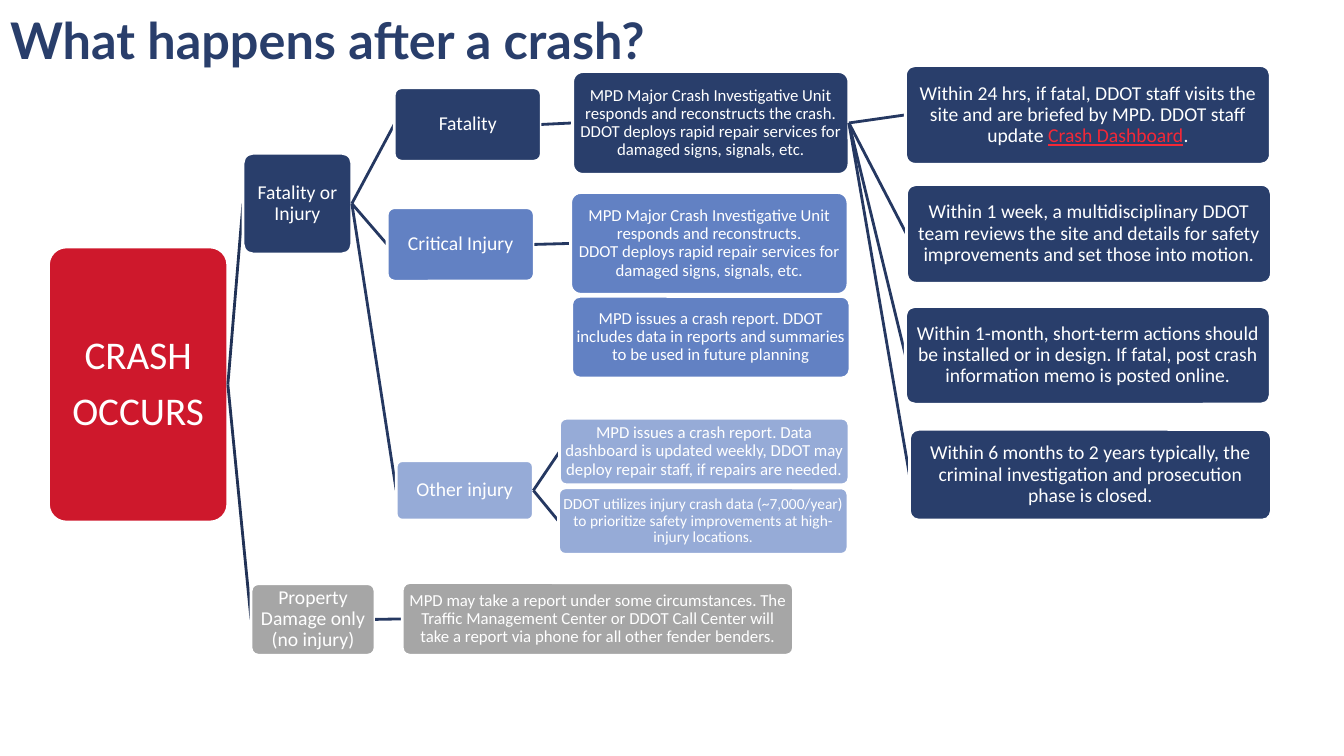
from lxml.etree import SubElement
from pptx import Presentation
from pptx.dml.color import RGBColor
from pptx.enum.shapes import MSO_CONNECTOR, MSO_SHAPE
from pptx.enum.text import MSO_ANCHOR, MSO_AUTO_SIZE, PP_ALIGN
from pptx.oxml.ns import qn
from pptx.util import Inches, Pt

NAVY, BLUE, PALE, GRAY = "293E6B", "6281C3", "96ABD7", "A6A6A6"
RED, WHITE, LINK_RED = "CE182C", "FFFFFF", "F32837"
ROOT_LINE, BRANCH_LINE = "213256", "253861"

# name: (parent, (left, top, width, height), fill, text size, text)
# A tab character in a text separates the underlined part.
BOXES = {
    "crash": (None, (0.48, 2.45, 1.78, 2.73), RED, 28, "CRASH\nOCCURS"),
    "casualty": ("crash", (2.41, 1.52, 1.08, 1), NAVY, 14, "Fatality or Injury"),
    "fatality": ("casualty", (3.91, 0.87, 1.46, 0.73), NAVY, 14, "Fatality"),
    "fatal response": (
        "fatality", (5.68, 0.71, 2.74, 1.02), NAVY, 12,
        "MPD Major Crash Investigative Unit responds and reconstructs the crash.\v"
        "DDOT deploys rapid repair services for damaged signs, signals, etc."),
    "24 hours": (
        "fatal response", (8.98, 0.65, 3.62, 0.98), NAVY, 14,
        "Within 24 hrs, if fatal, DDOT staff visits the site and are briefed by MPD. "
        "DDOT staff update \tCrash Dashboard\t."),
    "1 week": (
        "fatal response", (8.99, 1.83, 3.62, 0.98), NAVY, 14,
        "Within 1 week, a multidisciplinary DDOT team reviews the site and details "
        "for safety improvements and set those into motion."),
    "1 month": (
        "fatal response", (8.98, 3.04, 3.62, 0.97), NAVY, 14,
        "Within 1-month, short-term actions should be installed or in design. "
        "If fatal, post crash information memo is posted online."),
    "6 months": (
        "fatal response", (9.02, 4.26, 3.59, 0.9), NAVY, 14,
        "Within 6 months to 2 years typically, the criminal investigation and "
        "prosecution phase is closed."),
    "critical": ("casualty", (3.84, 2.06, 1.46, 0.73), BLUE, 14, "Critical Injury"),
    "critical response": (
        "critical", (5.66, 1.91, 2.75, 1.01), BLUE, 12,
        "MPD Major Crash Investigative Unit responds and reconstructs.\v"
        "DDOT deploys rapid repair services for damaged signs, signals, etc."),
    "other": ("casualty", (3.93, 4.57, 1.36, 0.59), PALE, 14, "Other injury"),
    "other report": (
        "other", (5.55, 4.15, 2.87, 0.66), PALE, 12,
        "MPD issues a crash report. Data dashboard is updated weekly, DDOT may "
        "deploy repair staff, if repairs are needed."),
    "other data": (
        "other", (5.54, 4.84, 2.87, 0.66), PALE, 11,
        "DDOT utilizes injury crash data (~7,000/year) to prioritize safety "
        "improvements at high-injury locations."),
    "property": ("crash", (2.49, 5.79, 1.23, 0.71), GRAY, 14,
                 "Property Damage only (no injury)"),
    "property report": (
        "property", (3.99, 5.78, 3.88, 0.72), GRAY, 12,
        "MPD may take a report under some circumstances. The Traffic Management "
        "Center or DDOT Call Center will take a report via phone for all other "
        "fender benders."),
    "critical report": (
        None, (5.67, 2.94, 2.76, 0.81), BLUE, 12,
        "MPD issues a crash report. DDOT includes data in reports and summaries "
        "to be used in future planning"),
}


def color(hex_string):
    return RGBColor.from_string(hex_string)


def style_font(font, name, size, hex_string):
    font.name = name
    font.size = Pt(size)
    font.color.rgb = color(hex_string)


def set_title(slide, text):
    title = slide.shapes.title
    title.left, title.top = Inches(0), Inches(0.01)
    title.width, title.height = Inches(13.33), Inches(0.77)
    frame = title.text_frame
    frame.text = text
    frame.auto_size = MSO_AUTO_SIZE.NONE
    frame.vertical_anchor = MSO_ANCHOR.MIDDLE
    paragraph = frame.paragraphs[0]
    paragraph.alignment = PP_ALIGN.LEFT
    font = paragraph.runs[0].font
    style_font(font, "Lato", 36, NAVY)
    font.bold = True


def fill_paragraph(paragraph, text, size):
    parts = text.split("\t")
    paragraph.text = parts[0]
    for part in parts[1:]:
        paragraph.add_run().text = part
    paragraph.alignment = PP_ALIGN.CENTER
    paragraph.line_spacing = 0.9
    paragraph.space_after = Pt(round(size * 0.35))
    for run in paragraph.runs:
        style_font(run.font, "Calibri", size, WHITE)
    if len(parts) > 1:
        underlined = paragraph.runs[1].font
        underlined.underline = True
        underlined.color.rgb = color(LINK_RED)


def add_box(slide, place, fill, size, text):
    box = slide.shapes.add_shape(
        MSO_SHAPE.ROUNDED_RECTANGLE, *(Inches(length) for length in place))
    box.adjustments[0] = 0.1
    box.shadow.inherit = False
    box.fill.solid()
    box.fill.fore_color.rgb = color(fill)
    box.line.color.rgb = color(WHITE)
    box.line.width = Pt(2)
    frame = box.text_frame
    frame.word_wrap = True
    frame.vertical_anchor = MSO_ANCHOR.MIDDLE
    frame.margin_left = frame.margin_right = Inches(0.01)
    frame.margin_top = frame.margin_bottom = Inches(0.01)
    frame.text = text
    for paragraph, line in zip(frame.paragraphs, text.split("\n")):
        fill_paragraph(paragraph, line, size)


def add_branch(slide, parent_place, child_place, hex_string):
    """Join the right middle of the parent to the left middle of the child."""
    left, top, width, height = parent_place
    child_left, child_top, _, child_height = child_place
    branch = slide.shapes.add_connector(
        MSO_CONNECTOR.STRAIGHT,
        Inches(left + width), Inches(top + height / 2),
        Inches(child_left), Inches(child_top + child_height / 2))
    branch.line.color.rgb = color(hex_string)
    branch.line.width = Pt(2)
    properties = branch._element.find(qn("p:spPr"))
    SubElement(properties, qn("a:effectLst"))


def main():
    presentation = Presentation()
    presentation.slide_width = Inches(13.33)
    presentation.slide_height = Inches(7.5)
    slide = presentation.slides.add_slide(presentation.slide_layouts[5])

    set_title(slide, "What happens after a crash?")

    # Decision tree: each branch lies just below its child box
    for parent, place, fill, size, text in BOXES.values():
        if parent:
            line_color = ROOT_LINE if parent == "crash" else BRANCH_LINE
            add_branch(slide, BOXES[parent][1], place, line_color)
        add_box(slide, place, fill, size, text)

    presentation.save("out.pptx")


if __name__ == "__main__":
    main()
